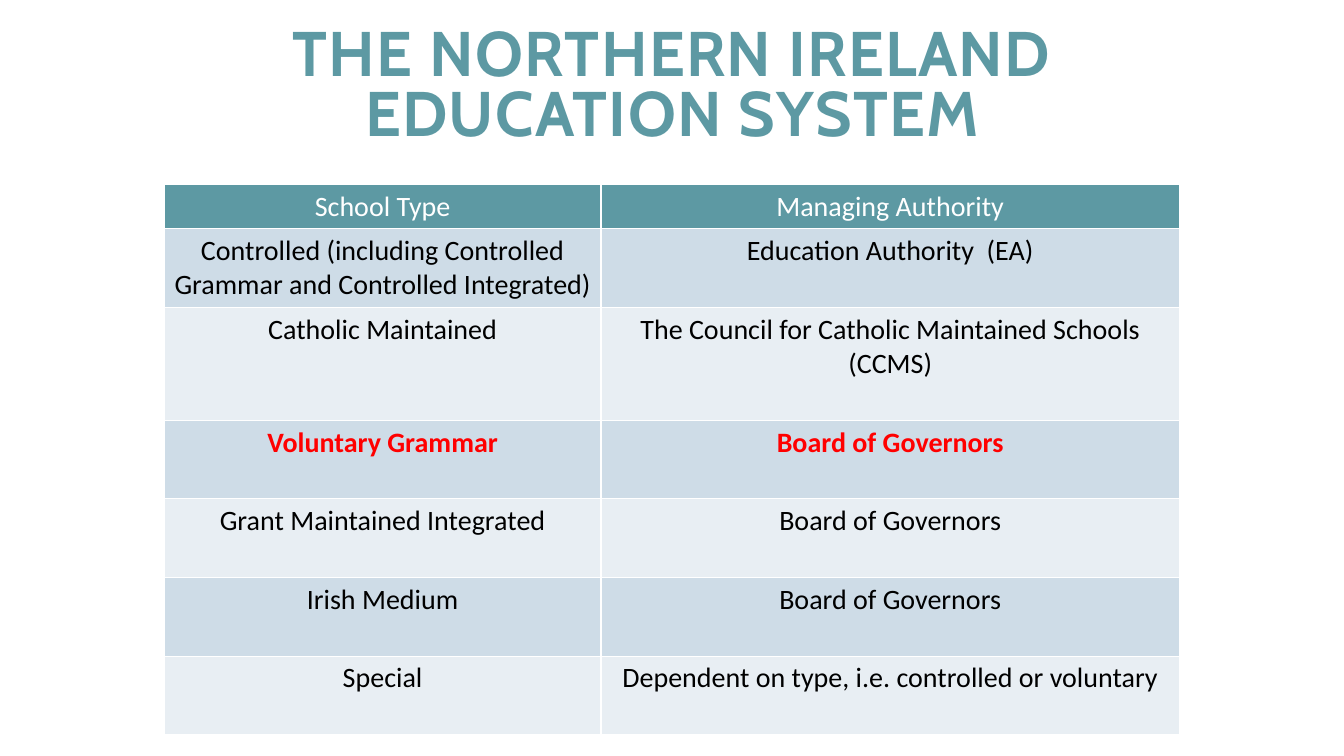
"""Build the Northern Ireland education system slide."""
from dataclasses import dataclass

from lxml.etree import SubElement
from pptx import Presentation
from pptx.dml.color import RGBColor
from pptx.enum.text import MSO_ANCHOR, PP_ALIGN
from pptx.oxml.ns import qn
from pptx.util import Inches, Pt


@dataclass(frozen=True)
class Theme:
    """Colours, fonts and type sizes of the slide."""

    teal: str = "5D99A3"
    white: str = "FFFFFF"
    black: str = "000000"
    red: str = "FF0000"
    bands: tuple = ("CEDCE7", "E8EEF3")
    title_font: str = "Cabin"
    body_font: str = "Calibri"
    title_size: int = 45
    body_size: int = 20


THEME = Theme()
HEADINGS = ("School Type", "Managing Authority")
SCHOOLS = (
    ("Controlled (including Controlled Grammar and Controlled Integrated)", "Education Authority  (EA)"),
    ("Catholic Maintained", "The Council for Catholic Maintained Schools (CCMS)"),
    ("Voluntary Grammar", "Board of Governors"),
    ("Grant Maintained Integrated", "Board of Governors"),
    ("Irish Medium", "Board of Governors"),
    ("Special", "Dependent on type, i.e. controlled or voluntary"),
)
HIGHLIGHTED = "Voluntary Grammar"
COLUMN_WIDTHS = (4.33, 5.74)
ROW_HEIGHTS = (0.44, 0.78, 1.12, 0.78, 0.78, 0.78, 0.78)


def style_text(text_frame, font_name, size, color, bold):
    """Centre the text and format its runs."""
    for paragraph in text_frame.paragraphs:
        paragraph.alignment = PP_ALIGN.CENTER
        for run in paragraph.runs:
            run.font.name = font_name
            run.font.size = Pt(size)
            run.font.bold = bold
            run.font.color.rgb = RGBColor.from_string(color)


def add_title(slide, text):
    """Add the spaced, centred heading."""
    box = slide.shapes.add_textbox(Inches(1.97), Inches(0.22), Inches(9.4), Inches(1.31))
    text_frame = box.text_frame
    text_frame.word_wrap = True
    text_frame.vertical_anchor = MSO_ANCHOR.MIDDLE
    text_frame.text = text
    paragraph = text_frame.paragraphs[0]
    paragraph.line_spacing = 0.8
    style_text(text_frame, THEME.title_font, THEME.title_size, THEME.teal, True)
    paragraph.runs[0].font._element.set("spc", "100")


def add_borders(cell):
    """Give a cell thin white borders on all sides."""
    properties = cell._tc.get_or_add_tcPr()
    for side in ("a:lnL", "a:lnR", "a:lnT", "a:lnB"):
        line = SubElement(properties, qn(side), w=str(Pt(1)))
        fill = SubElement(line, qn("a:solidFill"))
        SubElement(fill, qn("a:srgbClr"), val=THEME.white)


def fill_cell(cell, text, background, color, bold):
    """Write and format one table cell."""
    cell.text_frame.text = text
    style_text(cell.text_frame, THEME.body_font, THEME.body_size, color, bold)
    add_borders(cell)
    cell.fill.solid()
    cell.fill.fore_color.rgb = RGBColor.from_string(background)


def add_school_table(slide):
    """Add the table of school types and managing authorities."""
    frame = slide.shapes.add_table(
        len(ROW_HEIGHTS), len(COLUMN_WIDTHS), Inches(1.63), Inches(1.83),
        Inches(sum(COLUMN_WIDTHS)), Inches(sum(ROW_HEIGHTS)),
    )
    table = frame.table
    for column, width in zip(table.columns, COLUMN_WIDTHS):
        column.width = Inches(width)
    for row, height in zip(table.rows, ROW_HEIGHTS):
        row.height = Inches(height)
    for column_index, heading in enumerate(HEADINGS):
        fill_cell(table.cell(0, column_index), heading, THEME.teal, THEME.white, False)
    for row_index, school in enumerate(SCHOOLS):
        background = THEME.bands[row_index % 2]
        highlighted = school[0] == HIGHLIGHTED
        color = THEME.red if highlighted else THEME.black
        for column_index, text in enumerate(school):
            fill_cell(table.cell(row_index + 1, column_index), text, background, color, highlighted)


def main():
    """Build and save the presentation."""
    presentation = Presentation()
    presentation.slide_width = Inches(13.33)
    presentation.slide_height = Inches(7.5)
    slide = presentation.slides.add_slide(presentation.slide_layouts[6])
    add_title(slide, "THE NORTHERN IRELAND EDUCATION SYSTEM")
    add_school_table(slide)
    presentation.save("out.pptx")


if __name__ == "__main__":
    main()
